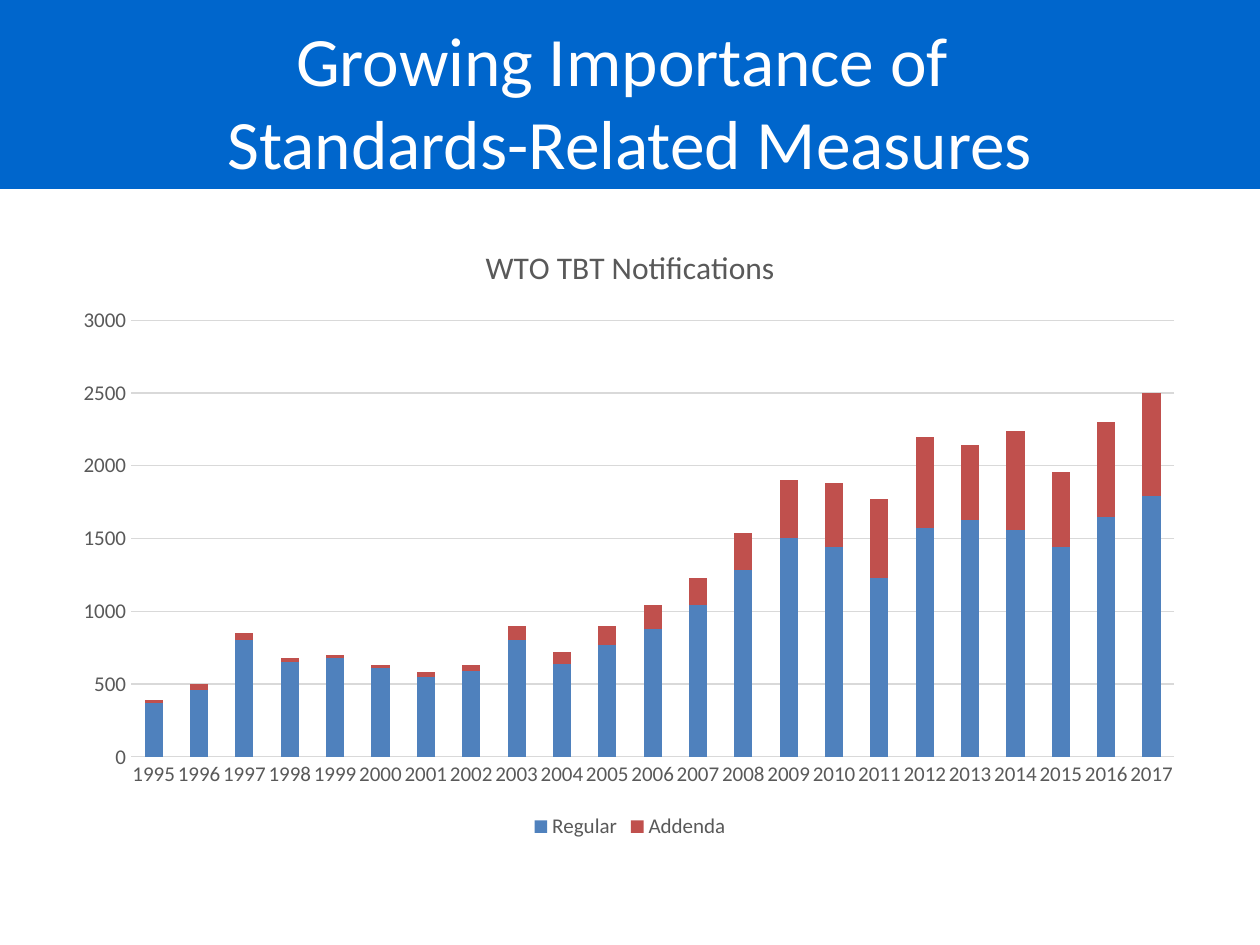
from pptx import Presentation
from pptx import util as u
from pptx.chart.data import CategoryChartData
from pptx.dml.color import RGBColor
from pptx.enum import chart as ch, shapes, text
from pptx.oxml import parse_xml
from pptx.oxml.ns import nsdecls


def paint(color, hue):
    color.rgb = RGBColor.from_string(hue)


def style(font, size, hue):
    font.name, font.size, font.bold = "Calibri", u.Pt(size), False
    paint(font.color, hue)


GREY, PALE = "595959", "D9D9D9"

deck = Presentation()
deck.slide_width, deck.slide_height = u.Inches(10), u.Inches(7.5)
slide = deck.slides.add_slide(deck.slide_layouts[5])

# Blue banner, behind the title
band = slide.shapes.add_shape(
    shapes.MSO_SHAPE.RECTANGLE, 0, 0, u.Inches(10), u.Inches(1.5))
band.shadow.inherit = False
band.fill.solid()
paint(band.fill.fore_color, "0066CC")
band.line.fill.background()
title = slide.shapes.title
title.element.addprevious(band.element)

# Title
title.left, title.top = u.Inches(0.5), u.Inches(0.17)
title.width, title.height = u.Inches(9), u.Inches(1.25)
frame = title.text_frame
frame.auto_size = text.MSO_AUTO_SIZE.NONE
frame.vertical_anchor = text.MSO_ANCHOR.MIDDLE
para = frame.paragraphs[0]
para.alignment = text.PP_ALIGN.CENTER
for i, line in enumerate(["Growing Importance of ", "Standards-Related Measures"]):
    if i:
        para.add_line_break()
    run = para.add_run()
    run.text = line
    style(run.font, 39.6, "FFFFFF")

# Chart data
series = [
    ("Regular", "4F81BD",
     [370, 460, 800, 650, 680, 610, 550, 590, 800, 640, 770, 880,
      1040, 1280, 1500, 1440, 1230, 1570, 1630, 1560, 1440, 1650, 1790]),
    ("Addenda", "C0504D",
     [20, 40, 50, 30, 20, 20, 30, 40, 100, 80, 130, 160,
      190, 260, 400, 440, 540, 630, 510, 680, 520, 650, 710]),
]
data = CategoryChartData()
data.categories = [str(year) for year in range(1995, 2018)]
for name, hue, vals in series:
    data.add_series(name, vals)
chart = slide.shapes.add_chart(
    ch.XL_CHART_TYPE.COLUMN_STACKED, u.Inches(0.5), u.Inches(1.75),
    u.Inches(9), u.Inches(4.95), data).chart
style(chart.font, 10, "000000")

# Chart title
chart.has_title = True
run = chart.chart_title.text_frame.paragraphs[0].add_run()
run.text = "WTO TBT Notifications"
style(run.font, 18, GREY)
chart.chart_title.include_in_layout = False

# Columns
plot = chart.plots[0]
plot.gap_width, plot.overlap = 150, 100
plot.vary_by_categories = False
for ser, (name, hue, vals) in zip(plot.series, series):
    ser.format.fill.solid()
    paint(ser.format.fill.fore_color, hue)

# Axes and gridlines
cats, scale = chart.category_axis, chart.value_axis
for axis in (cats, scale):
    axis.major_tick_mark = axis.minor_tick_mark = ch.XL_TICK_MARK.NONE
    style(axis.tick_labels.font, 12, GREY)
scale.minimum_scale, scale.maximum_scale, scale.major_unit = 0, 3000, 500
scale.format.line.fill.background()
scale.has_major_gridlines = True
for rule in (cats.format.line, scale.major_gridlines.format.line):
    rule.width = u.Pt(0.75)
    paint(rule.color, PALE)

# Legend
chart.has_legend = True
chart.legend.position = ch.XL_LEGEND_POSITION.BOTTOM
chart.legend.include_in_layout = False
style(chart.legend.font, 12, GREY)

# Plot area, as shares of the chart frame
area = chart.element.chart.plotArea
for old in area.findall("{*}layout"):
    area.remove(old)
places = "".join(f'<c:{key} val="{val}"/>' for key, val in [
    ("layoutTarget", "inner"), ("xMode", "edge"), ("yMode", "edge"),
    ("x", 0.06), ("y", 0.16), ("w", 0.92), ("h", 0.7)])
area.insert(0, parse_xml(
    f'<c:layout {nsdecls("c")}><c:manualLayout>{places}</c:manualLayout></c:layout>'))

deck.save("out.pptx")
